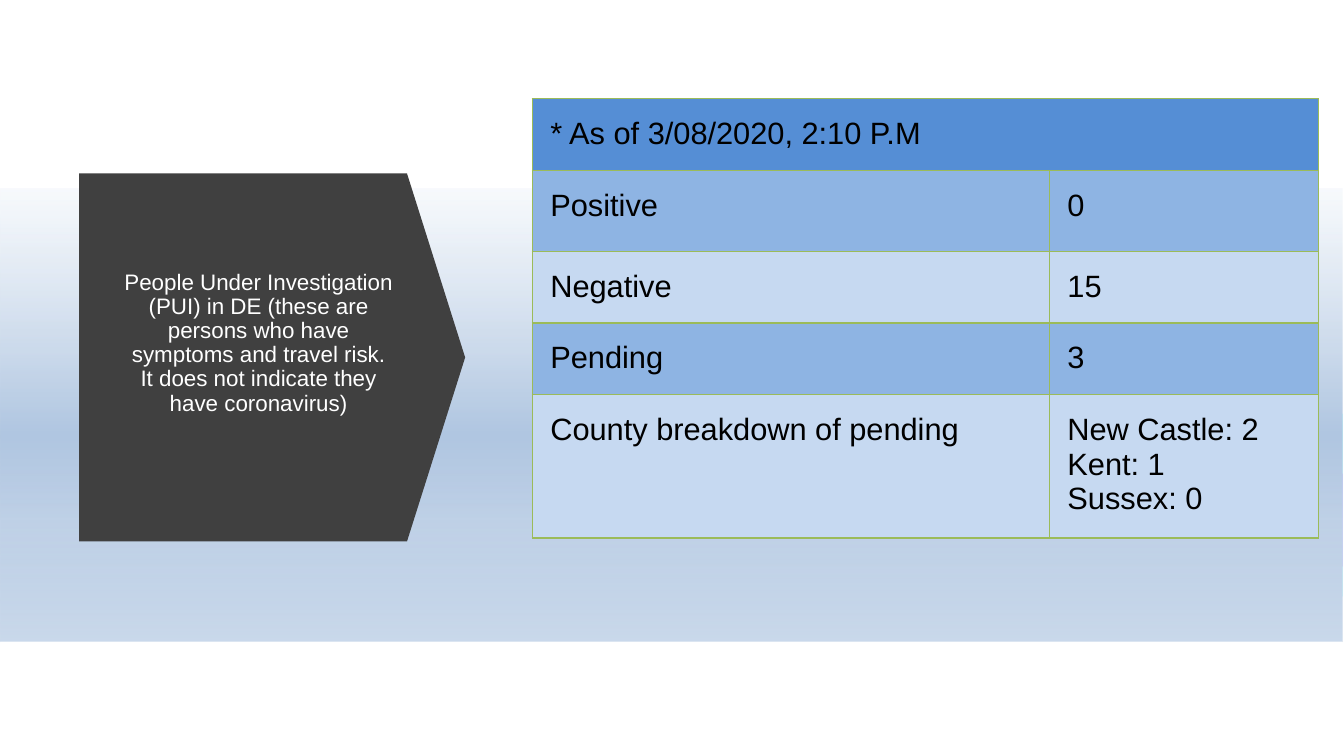
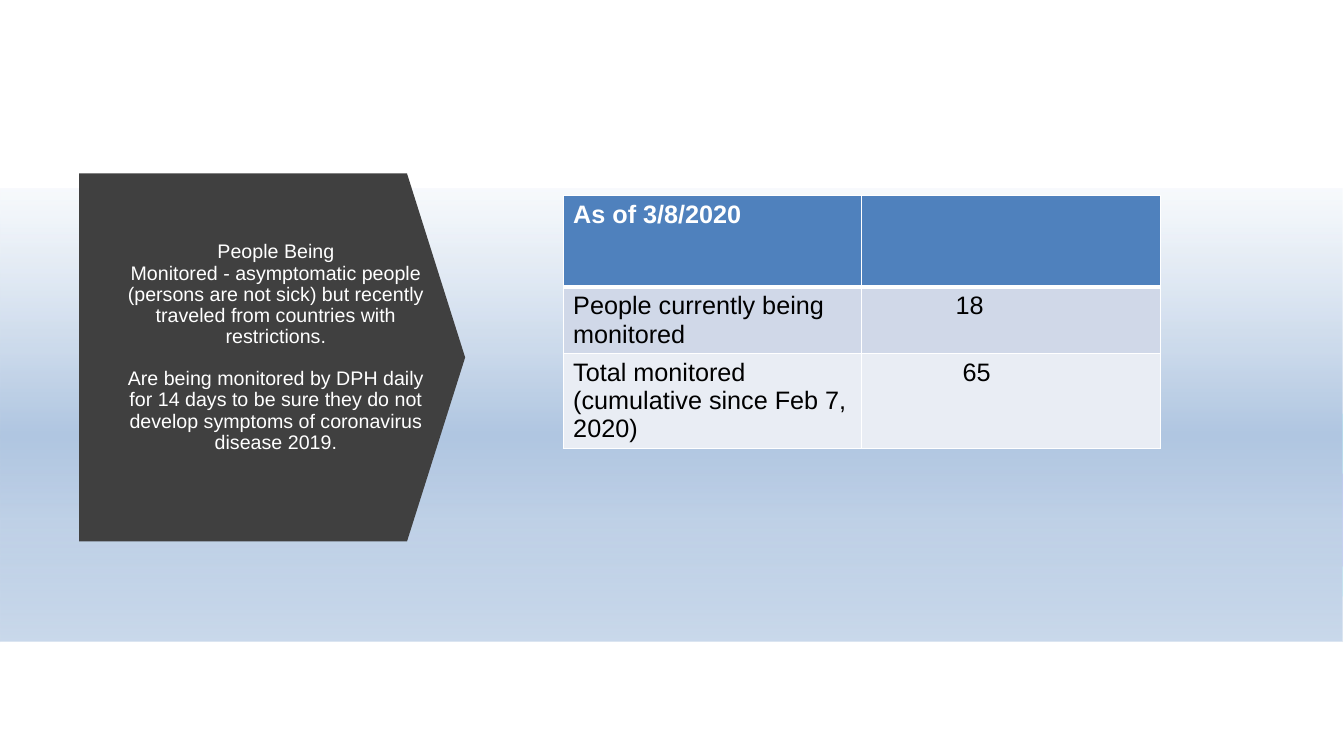
import pptx
import pptx.dml.color
import pptx.enum.shapes
import pptx.enum.text
import pptx.oxml.ns
import pptx.util
from dataclasses import dataclass
from lxml import etree

Inches, Pt = pptx.util.Inches, pptx.util.Pt
RGB = pptx.dml.color.RGBColor.from_string
qn = pptx.oxml.ns.qn
WIDE, HIGH = Inches(13.33), Inches(7.5)


@dataclass(frozen=True)
class Theme:
    font: str = "Arial"
    arrow: str = "404040"
    white: str = "FFFFFF"
    black: str = "000000"
    # position %, colour, opacity %
    band: tuple = ((0, "F6F9FC", 80), (54, "B0C6E1", 100),
                   (74, "B0C6E1", 80), (100, "CAD9EB", 100))
    lead: float = 0.9
    line: float = 1.18


@dataclass(frozen=True)
class Grid:
    """Look of a table: fills for head and alternate rows, rules, text."""
    head: str
    odd: str
    even: str
    rule: str
    ink: str
    size: int
    bold: bool = False
    inset: float = 0.1
    pad: float = 0.05
    thick: int = 1


THEME = Theme()
CASES = Grid("558ED5", "8EB4E3", "C6D9F1", "9BBB59", THEME.black, 22,
             inset=0.18, pad=0.18)
WATCH = Grid("4F81BD", "D0D8E8", "E9EDF4", THEME.white, THEME.white, 18,
             bold=True, thick=3)


def share(left, top, wide, high):
    """Turn percentages of the slide into a box of lengths."""
    return tuple(int(part * full / 100) for part, full in
                 zip((left, top, wide, high), (WIDE, HIGH, WIDE, HIGH)))


BAND = share(0, 24.93, 100, 60)
ARROW = share(5.88, 22.95, 28.73, 48.67)


def style(item, **values):
    for name, value in values.items():
        setattr(item, name, value)


def ink(part, size, color, bold=False):
    for run in part.runs:
        style(run.font, name=THEME.font, size=Pt(size), bold=bold)
        run.font.color.rgb = RGB(color)


def shape(slide, kind, box):
    item = slide.shapes.add_shape(kind, *box)
    item.shadow.inherit = False
    item.line.fill.background()
    return item


def trim(deck, plain):
    """Keep one layout, and drop the footer parts that no slide uses."""
    for layout in list(deck.slide_layouts):
        if layout.name != plain.name:
            deck.slide_layouts.remove(layout)
    kinds = pptx.enum.shapes.PP_PLACEHOLDER
    for sheet in (plain, deck.slide_master):
        for part in list(sheet.placeholders):
            if part.placeholder_format.type in (
                    kinds.DATE, kinds.FOOTER, kinds.SLIDE_NUMBER):
                sheet.shapes.element.remove(part.element)


def add_band(slide, master):
    """Put the shaded band on the master, behind its placeholders."""
    band = shape(slide, pptx.enum.shapes.MSO_SHAPE.RECTANGLE, BAND)
    band.fill.gradient()
    band.fill.gradient_angle = 270
    stops = band.element.find(".//" + qn("a:gsLst"))
    for stop in list(stops):
        stops.remove(stop)
    for place, color, solid in THEME.band:
        stop = etree.SubElement(stops, qn("a:gs"), pos=str(place * 1000))
        tint = etree.SubElement(stop, qn("a:srgbClr"), val=color)
        etree.SubElement(tint, qn("a:alpha"), val=str(solid * 1000))
    band.element.find(".//" + qn("p:cNvPr")).set("id", "99")
    master.shapes.element.insert(2, band.element)


def add_arrow(slide, box, texts, size, wide, high, tail):
    """Draw the arrow and centre the title in it, wide and high as shares.

    The tail is the room in points kept free below the text.
    """
    left, top, width, height = box
    arrow = shape(slide, pptx.enum.shapes.MSO_SHAPE.PENTAGON, box)
    arrow.adjustments[0] = 0.158
    arrow.fill.solid()
    arrow.fill.fore_color.rgb = RGB(THEME.arrow)

    title = slide.shapes.title
    slide.shapes.element.append(title.element)
    style(title, left=int(left + 0.09 * width), width=int(wide * width),
          top=int(top + (1 - high) / 2 * height), height=int(high * height))
    frame = title.text_frame
    style(frame, word_wrap=True, text=texts[0],
          auto_size=pptx.enum.text.MSO_AUTO_SIZE.NONE,
          vertical_anchor=pptx.enum.text.MSO_ANCHOR.MIDDLE,
          margin_left=Inches(0.09), margin_right=Inches(0.09),
          margin_top=Inches(0.05), margin_bottom=Inches(0.05) + Pt(tail))
    for text in texts[1:]:
        para = frame.add_paragraph()
        style(para, text=text,
              space_before=Pt(size * THEME.lead * THEME.line))
    for para in frame.paragraphs:
        style(para, line_spacing=THEME.lead,
              alignment=pptx.enum.text.PP_ALIGN.CENTER)
        ink(para, size, THEME.white)


def edge(cell, grid, row):
    props = cell._tc.get_or_add_tcPr()
    for side in "LRTB":
        heavy = (row, side) in ((0, "B"), (1, "T"))
        line = etree.SubElement(props, qn("a:ln" + side),
                                w=str(Pt(grid.thick if heavy else 1)))
        fill = etree.SubElement(line, qn("a:solidFill"))
        etree.SubElement(fill, qn("a:srgbClr"), val=grid.rule)


def add_grid(slide, box, grid, rows, cols, highs):
    """Add a table; cols and highs are weights that divide the box."""
    table = slide.shapes.add_table(len(rows), len(cols), *box).table
    style(table, first_row=False, horz_banding=False)
    for col, part in zip(table.columns, cols):
        col.width = int(part / sum(cols) * box[2])
    for row, part in zip(table.rows, highs):
        row.height = int(part / sum(highs) * box[3])
    for r, texts in enumerate(rows):
        back = grid.head if r == 0 else (grid.even, grid.odd)[r % 2]
        color = grid.ink if r == 0 else THEME.black
        for c, text in enumerate(texts):
            cell = table.cell(r, c)
            edge(cell, grid, r)
            cell.fill.solid()
            cell.fill.fore_color.rgb = RGB(back)
            style(cell, margin_left=Inches(grid.inset),
                  margin_right=Inches(grid.inset),
                  margin_top=Inches(grid.pad), margin_bottom=Inches(grid.pad))
            if text:
                cell.text = text
            for para in cell.text_frame.paragraphs:
                ink(para, grid.size, color, grid.bold and r == 0)
    return table


def cases(slide):
    add_arrow(slide, ARROW, [
        "People Under Investigation (PUI) in DE (these are persons who have "
        "symptoms and travel risk. It does not indicate they have coronavirus)",
    ], 16, 0.75, 0.76, 20)
    table = add_grid(slide, share(39.6, 13.07, 58.5, 58.1), CASES, [
        ("* As of 3/08/2020, 2:10 P.M", ""),
        ("Positive", "0"),
        ("Negative", "15"),
        ("Pending", "3"),
        ("County breakdown of pending", "New Castle: 2\vKent: 1\vSussex: 0"),
    ], (5.13, 2.67), (0.71, 0.8, 0.71, 0.71, 1.42))
    table.cell(0, 0).merge(table.cell(0, 1))


def watch(slide):
    add_arrow(slide, ARROW, [
        "People Being\vMonitored - asymptomatic people (persons are not sick) "
        "but recently traveled from countries with restrictions.",
        "Are being monitored by DPH daily for 14 days to be sure they do not "
        "develop symptoms of coronavirus disease 2019.",
    ], 14, 0.84, 1, 14)
    table = add_grid(slide, share(41.9, 25.87, 44.45, 33.4), WATCH, [
        ("As of 3/8/2020", ""),
        ("People currently being monitored", "18"),
        ("Total monitored (cumulative since Feb 7, 2020)", "65"),
    ], (1, 1), (0.91, 0.66, 0.94))
    for row, inset in ((1, 0.93), (2, 1)):
        table.cell(row, 1).margin_left = Inches(inset)


def main():
    deck = pptx.Presentation()
    style(deck, slide_width=WIDE, slide_height=HIGH)
    plain = deck.slide_layouts.get_by_name("Title Only")
    trim(deck, plain)
    first, second = (deck.slides.add_slide(plain) for _ in range(2))
    add_band(first, deck.slide_master)
    cases(first)
    watch(second)
    deck.save("out.pptx")


if __name__ == "__main__":
    main()
